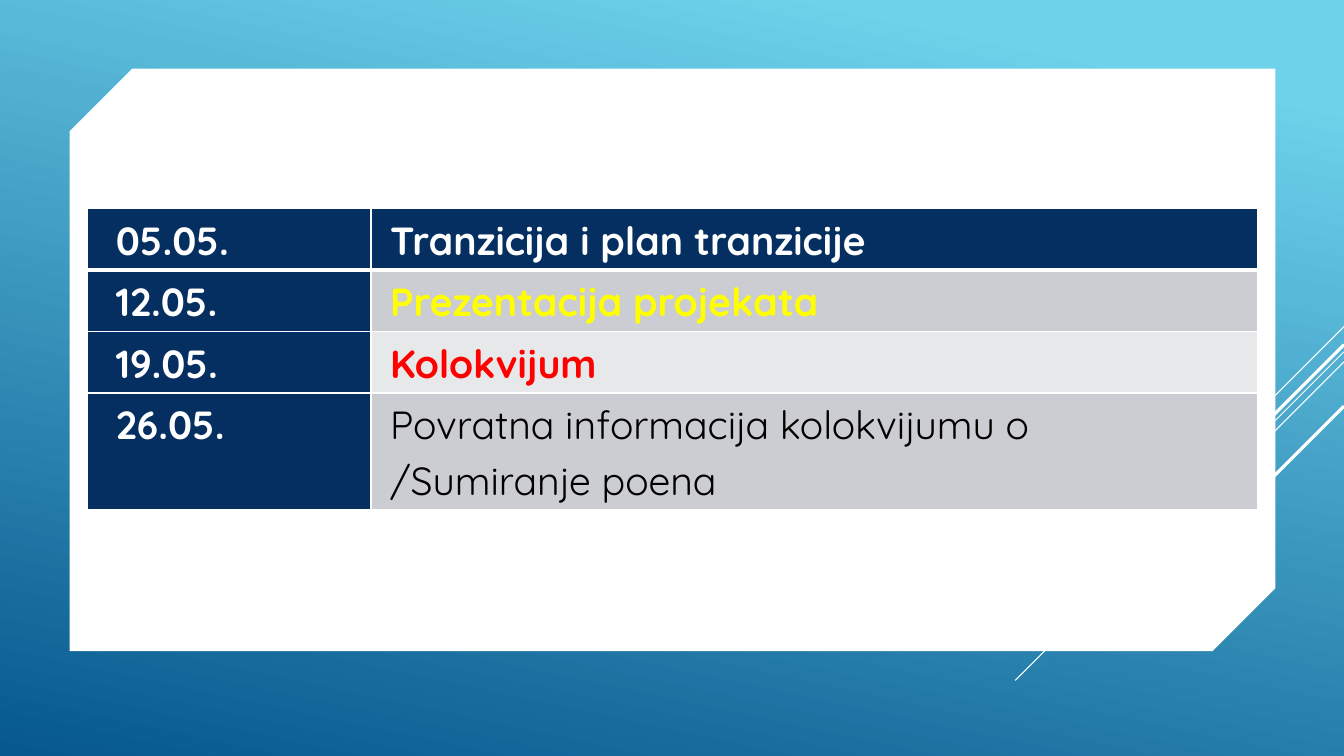
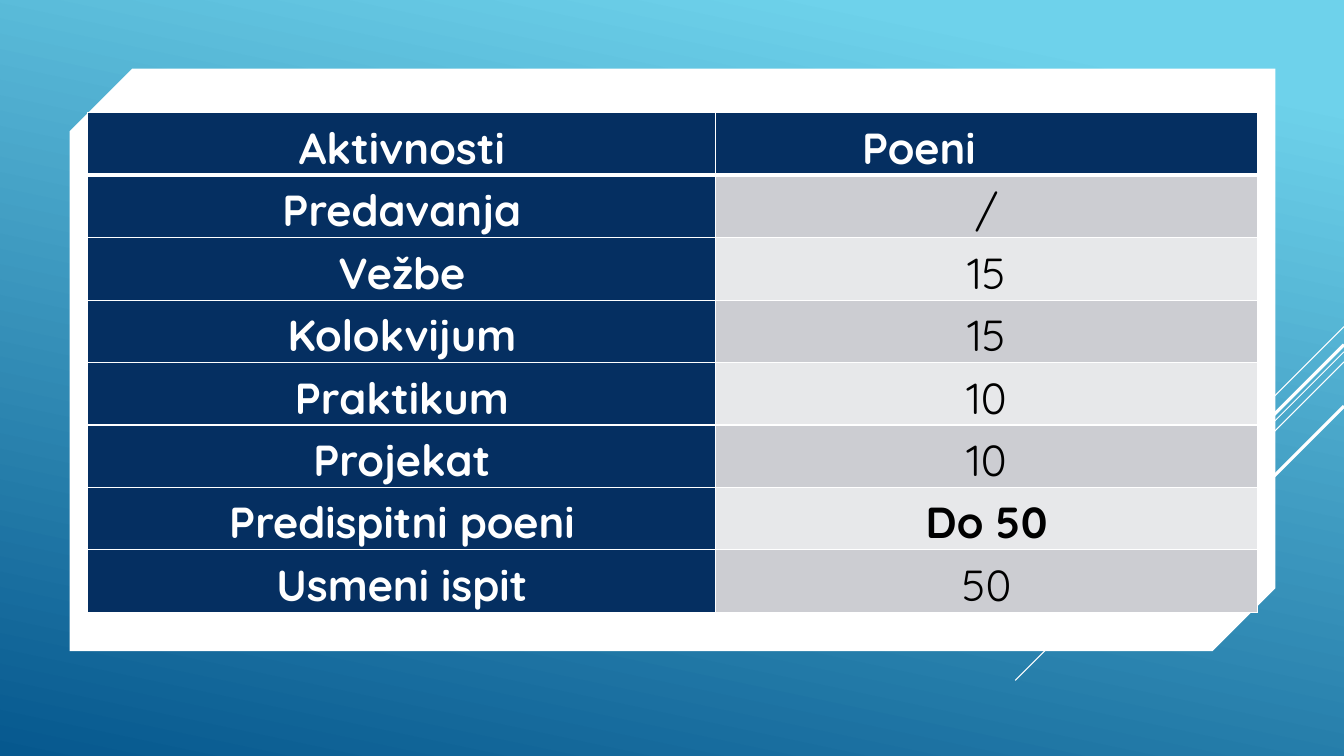
from dataclasses import dataclass

from lxml.etree import SubElement
from pptx import Presentation
from pptx.dml.color import RGBColor
from pptx.enum.shapes import MSO_CONNECTOR, MSO_SHAPE
from pptx.enum.text import PP_ALIGN
from pptx.oxml.ns import qn
from pptx.util import Inches, Pt


@dataclass(frozen=True)
class Theme:
    font: str = "Quicksand"
    sky: str = "6ED2EB"
    deep: str = "06588E"
    white: str = "FFFFFF"
    navy: str = "052F61"
    bands: tuple = ("CCCDD2", "E7E8EA")
    black: str = "000000"
    yellow: str = "FFFF00"
    red: str = "FF0000"
    schedule_size: int = 28
    points_size: int = 31
    line_spacing: float = 1.15
    thin: float = 0.75
    thick: float = 2.25
    grid: int = 1
    header_rule: int = 3


@dataclass(frozen=True)
class TableStyle:
    size: int
    inset: float
    space_after: int = 0
    align: PP_ALIGN = PP_ALIGN.LEFT


@dataclass(frozen=True)
class Entry:
    text: str
    ink: str = Theme.black
    bold: bool = False
    margin: float = 0
    hanging: float = 0
    align: PP_ALIGN | None = None


SLIDE_WIDTH, SLIDE_HEIGHT = 13.33, 7.5
TABLE_LEFT = 0.87
ROW_HEIGHT = 0.61
RAYS = (
    (3.24, 1.00, Theme.thin),
    (3.49, 3.26, Theme.thin),
    (3.59, 2.07, Theme.thin),
    (3.42, 1.91, Theme.thick),
    (4.03, 1.39, Theme.thick),
)


class Deck:
    def __init__(self, theme):
        self.theme = theme
        self.presentation = Presentation()
        self.presentation.slide_width = Inches(SLIDE_WIDTH)
        self.presentation.slide_height = Inches(SLIDE_HEIGHT)
        self.slide = None

    def new_slide(self):
        self.slide = self.presentation.slides.add_slide(self.presentation.slide_layouts[6])
        self.background()
        for top, reach, weight in RAYS:
            self.ray(top, reach, weight)
        self.panel()

    def background(self):
        fill = self.slide.background.fill
        fill.gradient()
        fill.gradient_angle = 258
        stops = ((0.1, self.theme.sky), (1, self.theme.deep))
        for stop, (position, color) in zip(fill.gradient_stops, stops):
            stop.position = position
            stop.color.rgb = RGBColor.from_string(color)

    def ray(self, top, reach, weight):
        ray = self.slide.shapes.add_connector(
            MSO_CONNECTOR.STRAIGHT,
            Inches(SLIDE_WIDTH), Inches(top),
            Inches(SLIDE_WIDTH - reach), Inches(top + reach),
        )
        ray.line.color.rgb = RGBColor.from_string(self.theme.white)
        ray.line.width = Pt(weight)
        SubElement(ray._element.spPr, qn("a:effectLst"))

    def panel(self):
        panel = self.slide.shapes.add_shape(
            MSO_SHAPE.SNIP_2_DIAG_RECTANGLE,
            Inches(0.69), Inches(0.68), Inches(11.96), Inches(5.78),
        )
        panel.adjustments[0] = 0.108
        panel.adjustments[1] = 0
        panel.shadow.inherit = False
        panel.fill.solid()
        panel.fill.fore_color.rgb = RGBColor.from_string(self.theme.white)
        panel.line.fill.background()

    def table(self, top, widths, row_heights, rows, style):
        table = self.slide.shapes.add_table(
            len(rows), len(widths), Inches(TABLE_LEFT), Inches(top),
            Inches(sum(widths)), Inches(sum(row_heights)),
        ).table
        table.horz_banding = False
        for column, width in zip(table.columns, widths):
            column.width = Inches(width)
        for row, height in zip(table.rows, row_heights):
            row.height = Inches(height)
        for r, entries in enumerate(rows):
            for c, entry in enumerate(entries):
                cell = table.cell(r, c)
                is_heading = r == 0 or c == 0
                self.borders(cell, r)
                cell.fill.solid()
                cell.fill.fore_color.rgb = RGBColor.from_string(
                    self.theme.navy if is_heading else self.theme.bands[(r - 1) % 2]
                )
                self.cell_text(cell, entry, style)

    def borders(self, cell, row):
        heavy = {0: "lnB", 1: "lnT"}.get(row)
        properties = cell._tc.get_or_add_tcPr()
        for side in ("lnL", "lnR", "lnT", "lnB"):
            weight = self.theme.header_rule if side == heavy else self.theme.grid
            border = SubElement(properties, qn(f"a:{side}"), w=str(Pt(weight)))
            paint = SubElement(border, qn("a:solidFill"))
            SubElement(paint, qn("a:srgbClr"), val=self.theme.white)

    def cell_text(self, cell, entry, style):
        cell.margin_left = cell.margin_right = Inches(style.inset)
        cell.margin_top = cell.margin_bottom = 0
        paragraph = cell.text_frame.paragraphs[0]
        paragraph.alignment = style.align if entry.align is None else entry.align
        paragraph.line_spacing = self.theme.line_spacing
        paragraph.space_after = Pt(style.space_after)
        indents = paragraph._p.get_or_add_pPr()
        indents.set("marL", str(Inches(entry.margin)))
        indents.set("indent", str(Inches(entry.hanging)))
        run = paragraph.add_run()
        run.text = entry.text
        run.font.name = self.theme.font
        run.font.size = Pt(style.size)
        run.font.bold = entry.bold
        run.font.color.rgb = RGBColor.from_string(entry.ink)


def heading(text, **layout):
    return Entry(text, Theme.white, True, **layout)


def date(text):
    return heading(text, margin=0.39, hanging=-0.3)


def main():
    theme = Theme()
    deck = Deck(theme)

    deck.new_slide()
    schedule = [
        (date("05.05."), heading("Tranzicija i plan tranzicije")),
        (date("12.05."), Entry("Prezentacija projekata", theme.yellow, True)),
        (date("19.05."), Entry("Kolokvijum", theme.red, True)),
        (date("26.05."), Entry("Povratna informacija kolokvijumu o /Sumiranje poena")),
    ]
    deck.table(2.07, (2.81, 8.79), [ROW_HEIGHT] * 3 + [1.16], schedule,
               TableStyle(theme.schedule_size, 0.19, space_after=10))

    deck.new_slide()
    activities = (
        ("Predavanja", "/"),
        ("Vežbe", "15"),
        ("Kolokvijum", "15"),
        ("Praktikum", "10"),
        ("Projekat", "10"),
        ("Predispitni poeni", "Do 50"),
        ("Usmeni ispit", "50"),
    )
    points = [(heading("Aktivnosti"), heading("Poeni", margin=1.35, align=PP_ALIGN.LEFT))]
    points += [
        (heading(activity), Entry(score, bold=score.startswith("Do")))
        for activity, score in activities
    ]
    deck.table(1.12, (6.23, 5.37), [ROW_HEIGHT] * len(points), points,
               TableStyle(theme.points_size, 0.1, align=PP_ALIGN.CENTER))

    deck.presentation.save("out.pptx")


if __name__ == "__main__":
    main()
